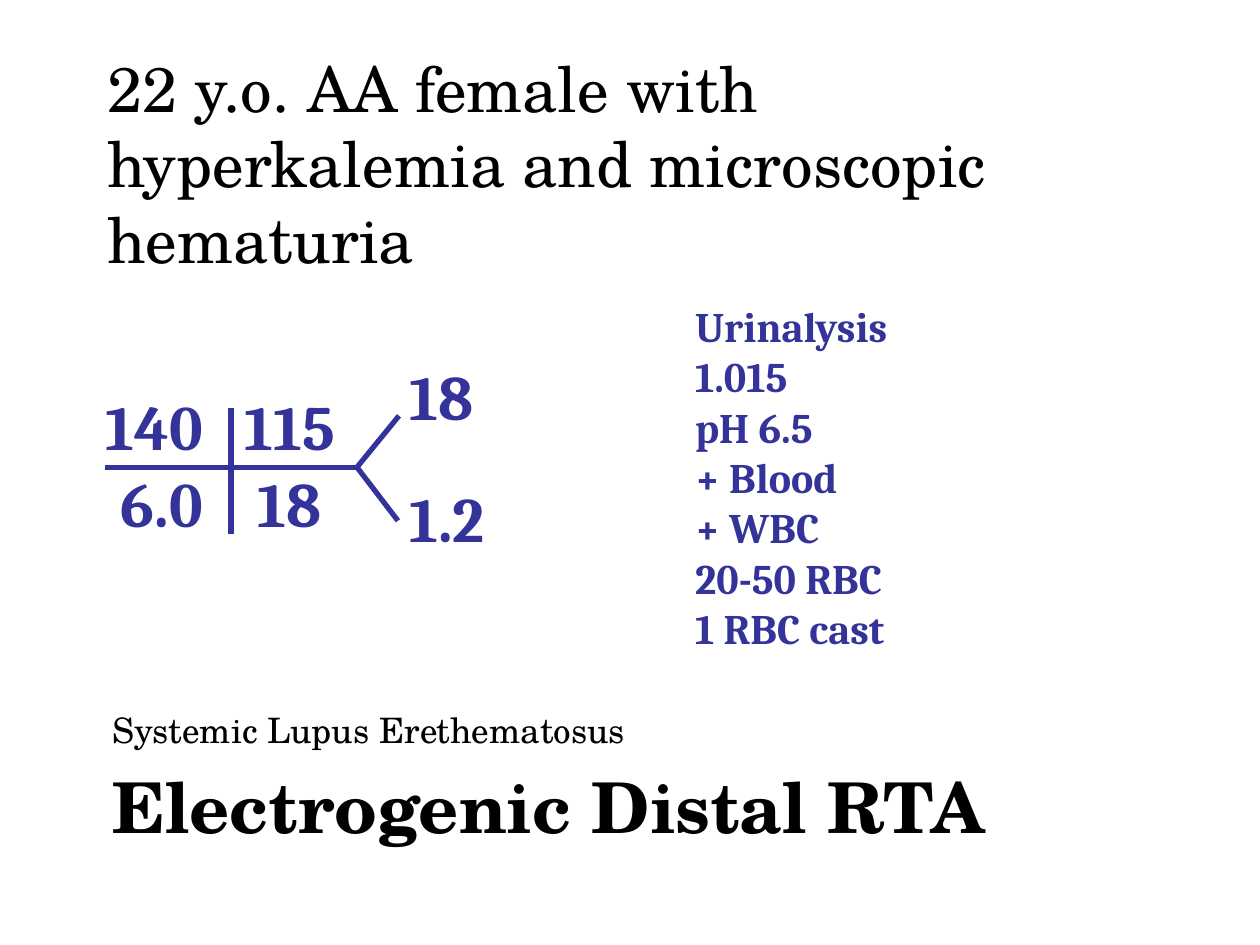
from dataclasses import dataclass

import pptx
import pptx.dml.color
import pptx.enum.shapes
import pptx.enum.text
import pptx.oxml
import pptx.oxml.ns
import pptx.util

COLORS = {"ink": "000000", "lab": "333399"}
SERIF, LAB = "TeX Gyre Schola", "Cambria"
COLS, ROWS = 120, 90
ANCHOR = pptx.enum.text.MSO_ANCHOR
ALIGN = pptx.enum.text.PP_ALIGN

prs = pptx.Presentation()
prs.slide_width, prs.slide_height = pptx.util.Inches(10), pptx.util.Inches(7.5)


@dataclass
class Box:
    col: float
    row: float
    cols: float
    rows: float


@dataclass
class Stroke:
    start: tuple
    end: tuple


@dataclass
class Values:
    box: Box
    texts: tuple
    gap: float
    align: ALIGN


def x(col: float) -> int:
    return int(prs.slide_width * col / COLS)


def y(row: float) -> int:
    return int(prs.slide_height * row / ROWS)


def rgb(name: str) -> pptx.dml.color.RGBColor:
    return pptx.dml.color.RGBColor.from_string(COLORS[name])


def set_text(sp, box: Box, texts: tuple, *, size: float, font: str = SERIF, color: str = "ink",
             bold: bool = False, anchor=ANCHOR.TOP, align=ALIGN.LEFT, spacing: float = 1.0,
             gap: float = 0, wrap: bool = True) -> None:
    """Place a shape on the grid and fill it with formatted paragraphs."""
    sp.left, sp.top, sp.width, sp.height = x(box.col), y(box.row), x(box.cols), y(box.rows)
    tf = sp.text_frame
    tf.auto_size = pptx.enum.text.MSO_AUTO_SIZE.NONE
    tf.word_wrap, tf.vertical_anchor = wrap, anchor
    for i, text in enumerate(texts):
        p = tf.add_paragraph() if i else tf.paragraphs[0]
        pPr = p._p.get_or_add_pPr()
        pPr.set("marL", "0")
        pPr.set("indent", "0")
        pPr.append(pptx.oxml.parse_xml(f'<a:buNone {pptx.oxml.ns.nsdecls("a")}/>'))
        p.alignment, p.line_spacing = align, spacing
        p.space_before = pptx.util.Pt(gap if i else 0)
        r = p.add_run()
        r.text = text
        r.font.name, r.font.size, r.font.bold = font, pptx.util.Pt(size), bold
        r.font.color.rgb = rgb(color)


def add_text(s, box: Box, texts: tuple, **style) -> None:
    """Add a text box with the given style."""
    set_text(s.shapes.add_textbox(0, 0, 0, 0), box, texts, **style)


def add_stroke(s, stroke: Stroke) -> None:
    """Draw one arm of the electrolyte diagram."""
    (x1, y1), (x2, y2) = stroke.start, stroke.end
    line = s.shapes.add_connector(pptx.enum.shapes.MSO_CONNECTOR.STRAIGHT, x(x1), y(y1), x(x2), y(y2))
    line.line.color.rgb, line.line.width = rgb("lab"), pptx.util.Pt(3)
    line._element.spPr.append(pptx.oxml.parse_xml(f'<a:effectLst {pptx.oxml.ns.nsdecls("a")}/>'))


def main() -> None:
    """Build the case slide."""
    s = prs.slides.add_slide(prs.slide_layouts[1])
    set_text(s.shapes.title, Box(9, 8, 102, 15),
             ("22 y.o. AA female with hyperkalemia and microscopic hematuria",),
             size=36, anchor=ANCHOR.MIDDLE)

    lab = dict(font=LAB, color="lab", bold=True)
    for values in (Values(Box(8, 38.9, 12.5, 13.4), ("140", "6.0"), 18, ALIGN.RIGHT),
                   Values(Box(21.6, 38.9, 12, 13.4), ("115", "18"), 18, ALIGN.CENTER),
                   Values(Box(37.8, 36, 10, 17.8), ("18", "1.2"), 43.7, ALIGN.LEFT)):
        add_text(s, values.box, values.texts, size=36, spacing=0.6,
                 gap=values.gap, align=values.align, **lab)
    hub = (34, 44.5)
    for stroke in (Stroke((10, 44.5), hub), Stroke((22, 50.9), (22, 38.9)),
                   Stroke(hub, (37.9, 49.6)), Stroke(hub, (38, 39.6))):
        add_stroke(s, stroke)

    add_text(s, Box(9.5, 72.1, 102, 17.9), ("Electrogenic Distal RTA",), size=40, bold=True)
    add_text(s, Box(9.5, 52.4, 102, 19.7), ("Systemic Lupus Erethematosus",),
             size=20, anchor=ANCHOR.BOTTOM)

    findings = ("Urinalysis", "1.015", "pH 6.5", "+ Blood", "+ WBC", "20-50 RBC", "1 RBC cast")
    set_text(s.placeholders[1], Box(65, 28, 21.7, 35.2), findings, size=24, **lab)
    prs.save("out.pptx")


if __name__ == "__main__":
    main()
